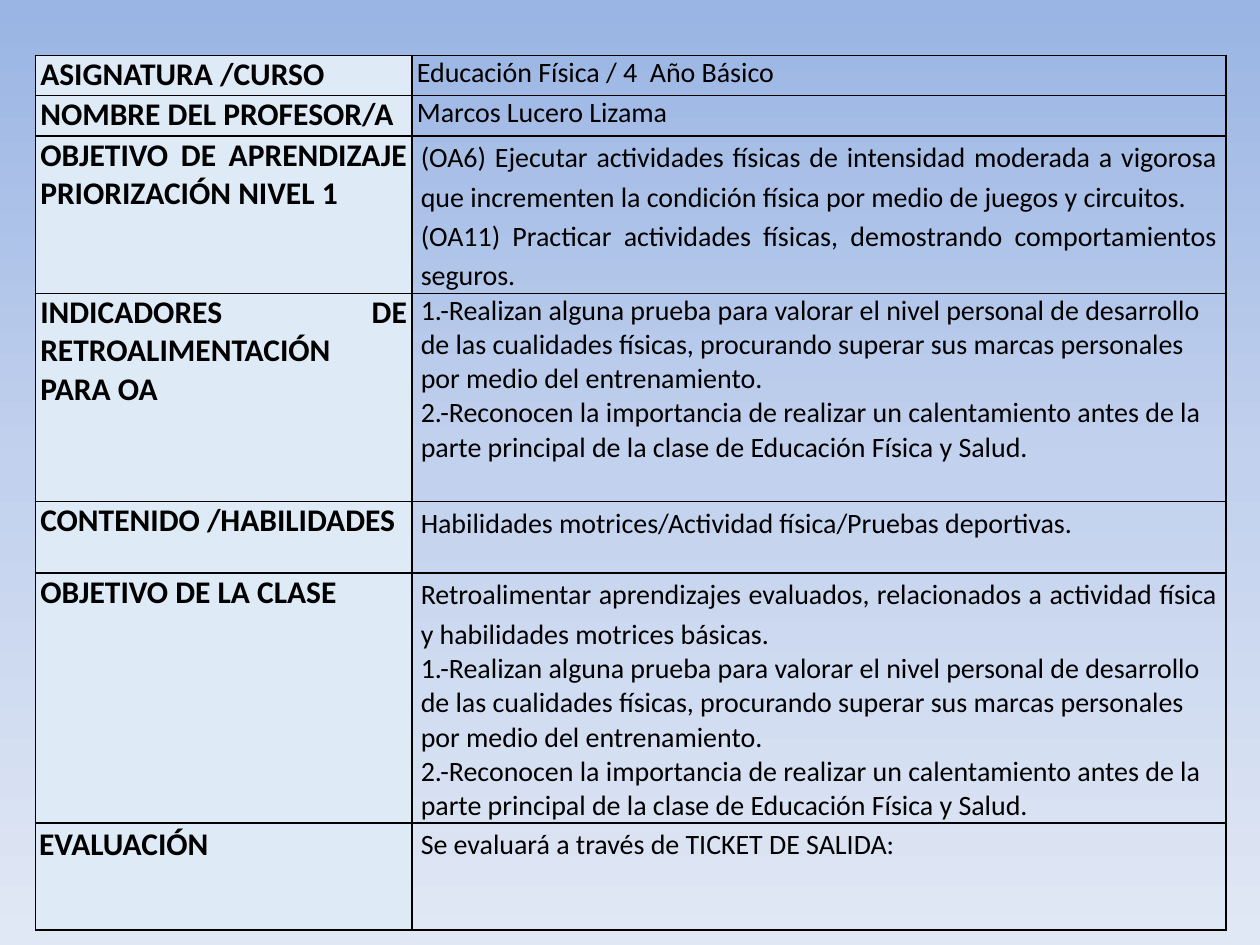
import copy

import pptx
import pptx.dml.color
import pptx.enum.text
import pptx.oxml
import pptx.oxml.ns
import pptx.util
from pptx.util import Inches

BLACK = pptx.dml.color.RGBColor(0x00, 0x00, 0x00)
LABEL_FILL = pptx.dml.color.RGBColor(0xDE, 0xEA, 0xF6)
SKY_STOPS = [
    (0, pptx.dml.color.RGBColor(0x9A, 0xB5, 0xE4)),
    (0.5, pptx.dml.color.RGBColor(0xC2, 0xD1, 0xED)),
    (1, pptx.dml.color.RGBColor(0xE1, 0xE8, 0xF5)),
]
JUSTIFY = pptx.enum.text.PP_ALIGN.JUSTIFY
LEFT = pptx.enum.text.PP_ALIGN.LEFT

# Paragraph styles: alignment and line spacing
PLAIN = (JUSTIFY, None)
SPACED = (JUSTIFY, 1.15)
LISTED = (LEFT, None)

# Cell margins: horizontal and vertical
NARROW = (0.04, 0)
WIDE = (0.07, 0)
FRAMED = (0.03, 0.02)

INDICATORS = [
    ("1.-Realizan alguna prueba para valorar el nivel personal de desarrollo de las "
     "cualidades físicas, procurando superar sus marcas personales por medio del "
     "entrenamiento.", LISTED),
    ("2.-Reconocen la importancia de realizar un calentamiento antes de la parte "
     "principal de la clase de Educación Física y Salud.", LISTED),
]

COLUMN_WIDTHS = [2.99, 6.46]

# Row height, label, label margins, detail margins, detail paragraphs
LESSON_ROWS = [
    (0.32, "ASIGNATURA /CURSO", NARROW, NARROW,
     [("Educación Física / 4  Año Básico", PLAIN)]),
    (0.32, "NOMBRE DEL PROFESOR/A", NARROW, NARROW,
     [("Marcos Lucero Lizama", PLAIN)]),
    (1.25, "OBJETIVO DE APRENDIZAJE PRIORIZACIÓN NIVEL 1", NARROW, WIDE,
     [("(OA6) Ejecutar actividades físicas de intensidad moderada a vigorosa que "
       "incrementen la condición física por medio de juegos y circuitos.", SPACED),
      ("(OA11) Practicar actividades físicas, demostrando comportamientos seguros.",
       SPACED)]),
    (1.65, "INDICADORES DE RETROALIMENTACIÓN PARA OA", NARROW, WIDE, INDICATORS),
    (0.57, "CONTENIDO /HABILIDADES", NARROW, WIDE,
     [("Habilidades motrices/Actividad física/Pruebas deportivas.", SPACED)]),
    (1.97, "OBJETIVO DE LA CLASE", NARROW, WIDE,
     [("Retroalimentar aprendizajes evaluados, relacionados a actividad física y "
       "habilidades motrices básicas.", SPACED)] + INDICATORS),
    (0.85, "EVALUACIÓN", FRAMED, WIDE,
     [("Se evaluará a través de TICKET DE SALIDA:", SPACED)]),
]


def paint_background(slide):
    fill = slide.background.fill
    fill.gradient()
    fill.gradient_angle = 270  # counter-clockwise, so top to bottom
    stop_list = next(slide._element.iter(pptx.oxml.ns.qn("a:gsLst")))
    while len(stop_list) < len(SKY_STOPS):
        stop_list.append(copy.deepcopy(stop_list[0]))
    for stop, (position, color) in zip(fill.gradient_stops, SKY_STOPS):
        stop.position = position
        stop.color.rgb = color


def draw_borders(cell):
    properties = cell._tc.get_or_add_tcPr()
    for side in ("lnL", "lnR", "lnT", "lnB"):
        properties.append(pptx.oxml.parse_xml(
            f'<a:{side} {pptx.oxml.ns.nsdecls("a")} w="{pptx.util.Pt(1)}">'
            f'<a:solidFill><a:srgbClr val="{BLACK}"/></a:solidFill></a:{side}>'))


def fill_cell(cell, paragraphs, margins, size, bold, color=None):
    draw_borders(cell)
    if color is None:
        cell.fill.background()
    else:
        cell.fill.solid()
        cell.fill.fore_color.rgb = color
    cell.margin_left = cell.margin_right = Inches(margins[0])
    cell.margin_top = cell.margin_bottom = Inches(margins[1])

    frame = cell.text_frame
    frame.text = "\n".join(text for text, _ in paragraphs)
    for paragraph, (_, (alignment, spacing)) in zip(frame.paragraphs, paragraphs):
        paragraph.alignment = alignment
        paragraph.line_spacing = spacing
        paragraph.font.name = "Calibri"
        paragraph.font.size = pptx.util.Pt(size)
        paragraph.font.bold = bold
        paragraph.font.color.rgb = BLACK


def add_lesson_table(slide, left, top, width, height):
    table = slide.shapes.add_table(
        len(LESSON_ROWS), len(COLUMN_WIDTHS), left, top, width, height).table
    table.first_row = False
    table.horz_banding = False
    for column, share in zip(table.columns, COLUMN_WIDTHS):
        column.width = int(width * share / sum(COLUMN_WIDTHS))
    for index, (row_height, label, label_margins, detail_margins, details) in enumerate(
            LESSON_ROWS):
        table.rows[index].height = Inches(row_height)
        fill_cell(table.cell(index, 0), [(label, PLAIN)], label_margins, 18, True,
                  LABEL_FILL)
        fill_cell(table.cell(index, 1), details, detail_margins, 16, False)


def main():
    presentation = pptx.Presentation()
    presentation.slide_width = Inches(10)
    presentation.slide_height = Inches(7.5)
    slide = presentation.slides.add_slide(presentation.slide_layouts[6])
    paint_background(slide)
    add_lesson_table(slide, Inches(0.28), Inches(0.44), Inches(9.45), Inches(6.93))
    presentation.save("out.pptx")


if __name__ == "__main__":
    main()
